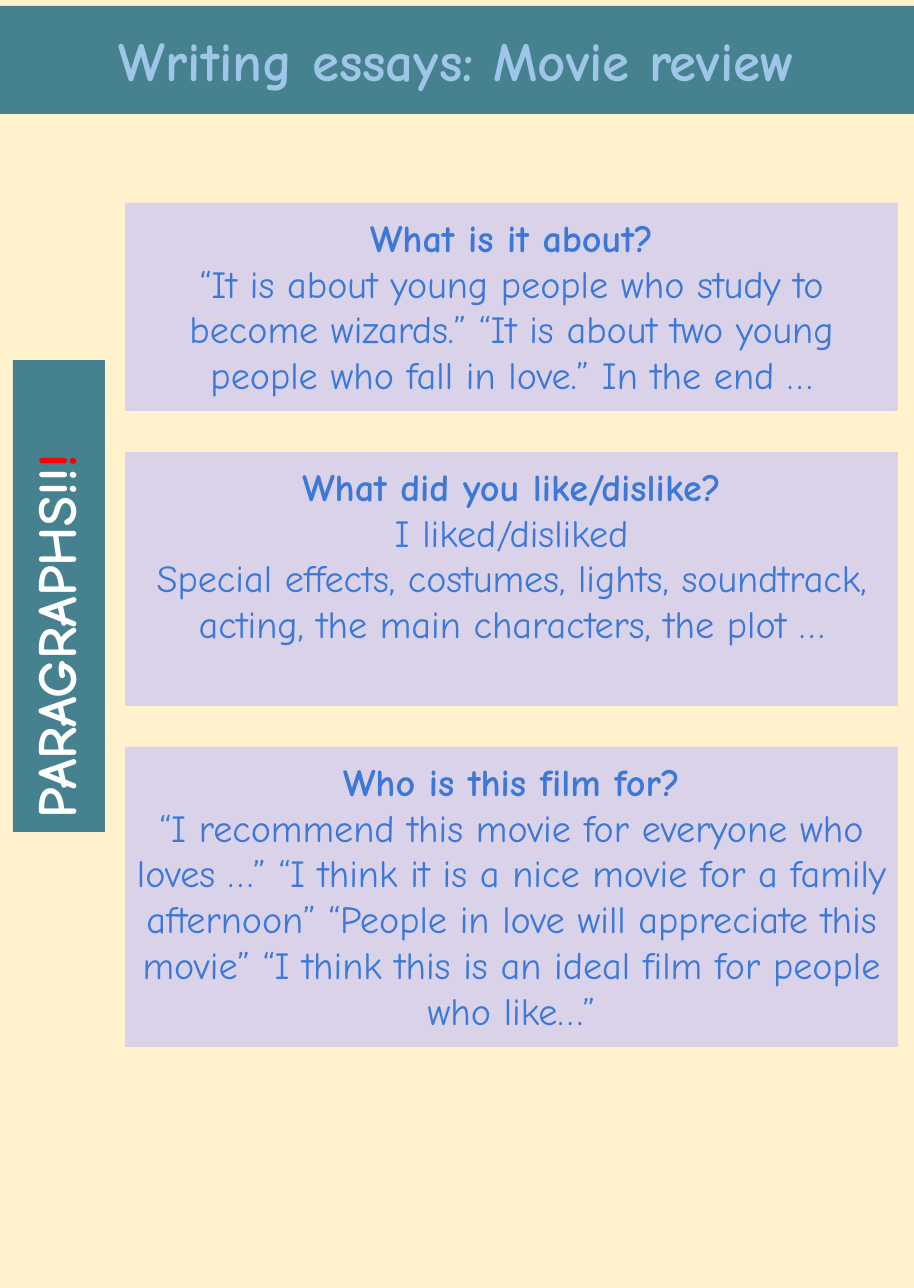
from pptx import Presentation
from pptx.dml.color import RGBColor
from pptx.enum.shapes import MSO_SHAPE
from pptx.enum.text import MSO_ANCHOR, PP_ALIGN
from pptx.util import Emu, Pt

# Content: each paragraph is a list of (text, colour, bold) runs
FONT = "Comic Neue"
CREAM, TEAL, LILAC = "FFF2CC", "45818E", "D9D2E9"
SKY, BLUE, WHITE, RED = "9FC5E8", "3C78D8", "FFFFFF", "FF0000"

TITLE = [[("Writing essays: Movie review", SKY, True)]]
SIDE_LABEL = [[("PARAGRAPHS!!", WHITE, True), ("!", RED, True)]]

# Cards: (question, answer paragraphs, lines of room)
CARDS = [
    ("What is it about?",
     ["“It is about young people who study to become wizards.” “It is about "
      "two young people who fall in love.” In the end …"], 4),
    ("What did you like/dislike?",
     ["I liked/disliked",
      "Special effects, costumes, lights, soundtrack, acting, the main "
      "characters, the plot …"], 5),
    ("Who is this film for?",
     ["“I recommend this movie for everyone who loves …” “I think it is a nice "
      "movie for a family afternoon” “People in love will appreciate this "
      "movie” “I think this is an ideal film for people who like…”"], 6),
]

# Layout in px
SLIDE_WIDTH, SLIDE_HEIGHT = 914, 1288
CARD_LEFT, CARD_WIDTH, FIRST_CARD_TOP = 125, 773, 203
LINE_HEIGHT, CARD_PADDING, CARD_GAP = 46, 24, 41
SIDE_LEFT, SIDE_TOP, SIDE_WIDTH, SIDE_HEIGHT = 13, 360, 92, 472


def px(value):
    return Emu(round(value * 914400 / 110.1))


def colour(hex_string):
    return RGBColor.from_string(hex_string)


def add_panel(slide, box, fill, paragraphs, size, inset, anchor,
              align=PP_ALIGN.CENTER, line_spacing=None):
    shape = slide.shapes.add_shape(MSO_SHAPE.RECTANGLE, *map(px, box))
    shape.shadow.inherit = False
    shape.fill.solid()
    shape.fill.fore_color.rgb = colour(fill)
    shape.line.fill.background()
    frame = shape.text_frame
    frame.word_wrap = True
    frame.vertical_anchor = anchor
    frame.margin_left = frame.margin_right = px(inset)
    frame.margin_top = frame.margin_bottom = px(inset)
    for index, runs in enumerate(paragraphs):
        paragraph = frame.add_paragraph() if index else frame.paragraphs[0]
        paragraph.alignment = align
        paragraph.line_spacing = line_spacing
        for text, text_colour, bold in runs:
            run = paragraph.add_run()
            run.text = text
            run.font.name = FONT
            run.font.size = Pt(size)
            run.font.bold = bold
            run.font.color.rgb = colour(text_colour)
    return shape


def main():
    presentation = Presentation()
    presentation.slide_width = px(SLIDE_WIDTH)
    presentation.slide_height = px(SLIDE_HEIGHT)
    slide = presentation.slides.add_slide(presentation.slide_layouts[6])
    slide.background.fill.solid()
    slide.background.fill.fore_color.rgb = colour(CREAM)

    # Title banner
    add_panel(slide, (0, 6, SLIDE_WIDTH, 108), TEAL, TITLE, 36, 14,
              MSO_ANCHOR.MIDDLE)

    # Side label, turned about its centre to read upwards
    shift = (SIDE_HEIGHT - SIDE_WIDTH) // 2
    side = add_panel(slide, (SIDE_LEFT - shift, SIDE_TOP + shift, SIDE_HEIGHT, SIDE_WIDTH),
                     TEAL, SIDE_LABEL, 36, 14, MSO_ANCHOR.MIDDLE,
                     PP_ALIGN.LEFT, 0.9)
    side.rotation = 270

    # Question cards, stacked with equal gaps
    top = FIRST_CARD_TOP
    for question, answers, lines in CARDS:
        height = CARD_PADDING + lines * LINE_HEIGHT
        paragraphs = [[(question, BLUE, True)]]
        paragraphs += [[(answer, BLUE, False)] for answer in answers]
        add_panel(slide, (CARD_LEFT, top, CARD_WIDTH, height), LILAC,
                  paragraphs, 25, 11, MSO_ANCHOR.TOP)
        top += height + CARD_GAP

    presentation.save("out.pptx")


if __name__ == "__main__":
    main()
